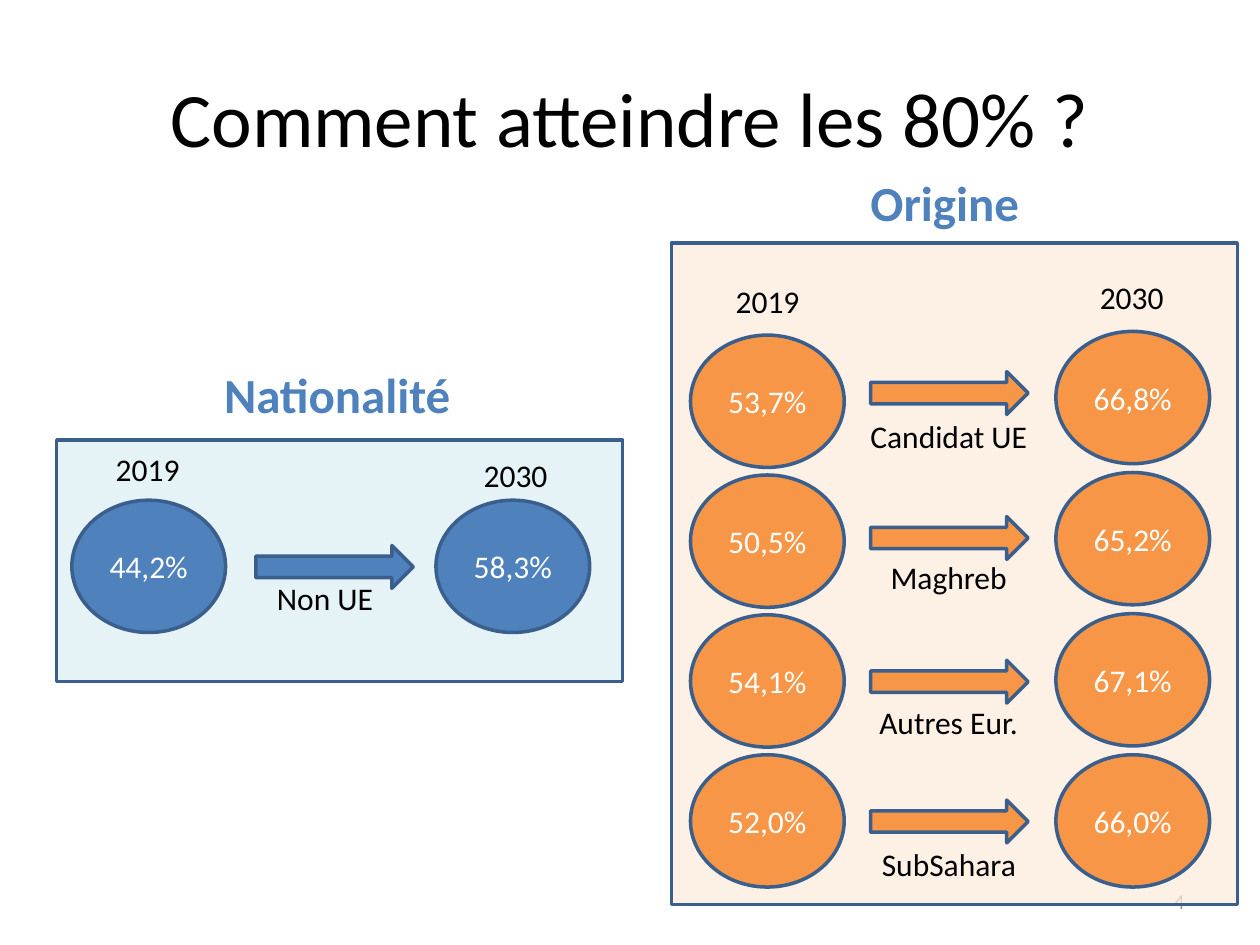
"""Build the slide on reaching 80% by nationality and by origin."""
import pptx
import pptx.util
from lxml import etree
from pptx.dml.color import RGBColor
from pptx.enum.shapes import MSO_SHAPE
from pptx.enum.text import MSO_ANCHOR, MSO_AUTO_SIZE, PP_ALIGN
from pptx.oxml.ns import qn

PX = 9144
COLORS = {
    "black": "000000", "white": "FFFFFF", "grey": "8C8C8C", "outline": "3A5F8C",
    "blue": "4F81BD", "orange": "F79646", "pale blue": "DBEEF4", "pale orange": "FDEADA",
}
TITLE = "Comment atteindre les 80% ?"
PAGE = "4"
CIRCLE_W, CIRCLE_H = 122, 105
ARROW_W, ARROW_H = 125, 34
YEAR_W, LABEL_H = 71, 40
PANELS = [
    {
        "heading": ("Nationalité", 168, 284, 202),
        "box": (45, 349, 449, 192), "tint": "pale blue", "fill": "blue",
        "columns": (57, 346), "arrow_x": 203, "label_center": 259,
        "years": (("2019", 82, 352), ("2030", 374, 357)),
        "rows": [("Non UE", 97, ("44,2%", "58,3%"), (397, 397), 433, 455)],
    },
    {
        "heading": ("Origine", 681, 132, 139),
        "box": (533, 193, 449, 525), "tint": "pale orange", "fill": "orange",
        "columns": (548, 838), "arrow_x": 691, "label_center": 754,
        "years": (("2019", 574, 219), ("2030", 863, 216)),
        "rows": [
            ("Candidat UE", 146, ("53,7%", "66,8%"), (266, 263), 295, 326),
            ("Maghreb", 113, ("50,5%", "65,2%"), (377, 375), 410, 438),
            ("Autres Eur.", 131, ("54,1%", "67,1%"), (488, 487), 524, 553),
            ("SubSahara", 128, ("52,0%", "66,0%"), (599, 599), 635, 666),
        ],
    },
]


def rgb(name):
    return RGBColor.from_string(COLORS[name])


def write(sp, text, size, color, align, anchor, bold=False):
    tf = sp.text_frame
    tf.text = text
    tf.vertical_anchor = anchor
    p = tf.paragraphs[0]
    p.alignment = align
    font = p.runs[0].font
    font.name, font.size, font.bold = "Calibri", pptx.util.Pt(size), bold
    font.color.rgb = rgb(color)


def add_text(s, box, text, size, color="black", bold=False,
             align=PP_ALIGN.LEFT, anchor=MSO_ANCHOR.TOP, wrap=False):
    sp = s.shapes.add_textbox(*(v * PX for v in box))
    sp.text_frame.word_wrap = wrap
    if not wrap:
        sp.text_frame.auto_size = MSO_AUTO_SIZE.SHAPE_TO_FIT_TEXT
    write(sp, text, size, color, align, anchor, bold)


def add_shape(s, kind, box, fill, text=None, opacity=None):
    sp = s.shapes.add_shape(kind, *(v * PX for v in box))
    sp.shadow.inherit = False
    sp.fill.solid()
    sp.fill.fore_color.rgb = rgb(fill)
    sp.line.color.rgb = rgb("outline")
    sp.line.width = pptx.util.Pt(2)
    if opacity:
        color = sp.element.spPr.find(qn("a:solidFill")).find(qn("a:srgbClr"))
        etree.SubElement(color, qn("a:alpha"), val=str(opacity * 1000))
    if text:
        write(sp, text, 18, "white", PP_ALIGN.CENTER, MSO_ANCHOR.MIDDLE)


def add_panel(s, panel):
    add_shape(s, MSO_SHAPE.RECTANGLE, panel["box"], panel["tint"], opacity=70)
    heading, x, y, w = panel["heading"]
    add_text(s, (x, y, w, 57), heading, 28, "blue", bold=True)
    for year, x, y in panel["years"]:
        add_text(s, (x, y, YEAR_W, LABEL_H), year, 18)
    for label, w, values, tops, arrow_y, label_y in panel["rows"]:
        for x, y, value in zip(panel["columns"], tops, values):
            add_shape(s, MSO_SHAPE.OVAL, (x, y, CIRCLE_W, CIRCLE_H), panel["fill"], value)
        arrow = (panel["arrow_x"], arrow_y, ARROW_W, ARROW_H)
        add_shape(s, MSO_SHAPE.RIGHT_ARROW, arrow, panel["fill"])
        x = (2 * panel["label_center"] - w) // 2
        add_text(s, (x, label_y, w, LABEL_H), label, 18)


def main():
    prs = pptx.Presentation()
    prs.slide_width, prs.slide_height = 1000 * PX, 750 * PX
    s = prs.slides.add_slide(prs.slide_layouts[6])
    add_text(s, (50, 30, 900, 125), TITLE, 44, align=PP_ALIGN.CENTER,
             anchor=MSO_ANCHOR.MIDDLE, wrap=True)
    add_text(s, (717, 695, 233, 40), PAGE, 12, "grey", align=PP_ALIGN.RIGHT,
             anchor=MSO_ANCHOR.MIDDLE, wrap=True)
    for panel in PANELS:
        add_panel(s, panel)
    prs.save("out.pptx")


if __name__ == "__main__":
    main()
